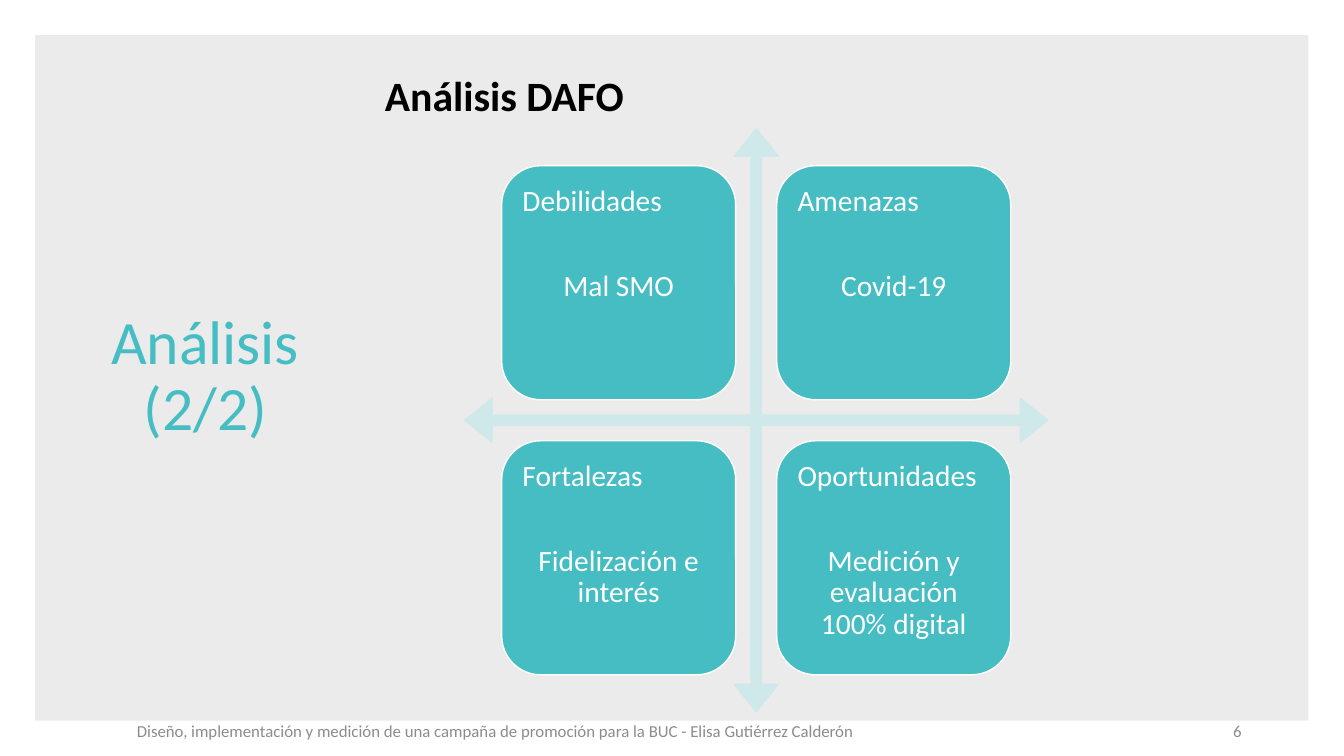
from dataclasses import dataclass

from lxml.etree import SubElement
from pptx import Presentation
from pptx.dml.color import RGBColor
from pptx.enum.shapes import MSO_SHAPE as SHAPE
from pptx.enum.text import MSO_ANCHOR as ANCHOR, MSO_AUTO_SIZE as FIT, PP_ALIGN as ALIGN
from pptx.oxml.ns import qn
from pptx.util import Pt


@dataclass(frozen=True)
class Theme:
    """Hold the colours, font and type sizes."""
    teal: RGBColor = RGBColor(0x45, 0xBD, 0xC3)
    pale: RGBColor = RGBColor(0xCF, 0xE8, 0xE9)
    white: RGBColor = RGBColor(0xFF, 0xFF, 0xFF)
    black: RGBColor = RGBColor(0, 0, 0)
    grey: RGBColor = RGBColor(0x8C, 0x8C, 0x8C)
    font: str = "Calibri"
    title: float = 44
    heading: float = 29.8
    card: float = 21
    footer: float = 12


THEME = Theme()


def place(sp, box):
    """Move and size a shape to a box in points."""
    sp.left, sp.top, sp.width, sp.height = (Pt(v) for v in box)


def add_text(p, text, size, color, align=ALIGN.LEFT, spacing=None, bold=False):
    """Add one formatted run to a paragraph."""
    p.alignment = align
    p.line_spacing = spacing
    r = p.add_run()
    r.text = text
    r.font.name, r.font.size, r.font.bold = THEME.font, Pt(size), bold
    r.font.color.rgb = color


def add_block(slide, kind, box, color):
    """Add a flat filled shape without outline."""
    sp = slide.shapes.add_shape(kind, *(Pt(v) for v in box))
    sp.shadow.inherit = False
    sp.fill.solid()
    sp.fill.fore_color.rgb = color
    sp.line.fill.background()
    return sp


def add_panel(slide, box):
    """Add the faint panel behind everything else."""
    sp = add_block(slide, SHAPE.RECTANGLE, box, THEME.black)
    color = sp.element.spPr.find(qn("a:solidFill"))[0]
    SubElement(color, qn("a:alpha"), val="8000")
    slide.shapes.element.insert(2, sp.element)


def fill_title(slide, box, text):
    """Place and fill the title placeholder."""
    sp = slide.shapes.title
    place(sp, box)
    tf = sp.text_frame
    tf.word_wrap, tf.auto_size, tf.vertical_anchor = True, FIT.NONE, ANCHOR.MIDDLE
    add_text(tf.paragraphs[0], text, THEME.title, THEME.teal, ALIGN.CENTER, 0.9)


def fill_heading(slide, box, text):
    """Place and fill the body placeholder as an unbulleted heading."""
    sp = slide.placeholders[1]
    place(sp, box)
    tf = sp.text_frame
    tf.word_wrap, tf.auto_size, tf.vertical_anchor = True, FIT.NONE, ANCHOR.TOP
    p = tf.paragraphs[0]
    add_text(p, text, THEME.heading, THEME.black, spacing=1.3, bold=True)
    p.space_before = Pt(10)
    pPr = p.runs[0].font._element.getparent().getparent().get_or_add_pPr()
    pPr.set("marL", "0")
    pPr.set("indent", "0")
    SubElement(pPr, qn("a:buNone"))


def add_card(slide, box, heading, item):
    """Add one rounded quadrant card with its heading and item."""
    sp = add_block(slide, SHAPE.ROUNDED_RECTANGLE, box, THEME.teal)
    sp.line.color.rgb = THEME.white
    sp.line.width = Pt(1)
    tf = sp.text_frame
    tf.word_wrap, tf.vertical_anchor = True, ANCHOR.TOP
    tf.margin_left = tf.margin_right = tf.margin_top = tf.margin_bottom = Pt(6.72)
    add_text(tf.paragraphs[0], heading, THEME.card, THEME.white, spacing=0.9)
    p = tf.add_paragraph()
    add_text(p, item, THEME.card, THEME.white, ALIGN.CENTER, 0.9)
    p.space_before = Pt(37.5)


def add_matrix(slide, box, cards):
    """Add the crossed arrows and a two-by-two grid of cards."""
    left, top, side, _ = box
    arrows = add_block(slide, SHAPE.QUAD_ARROW, box, THEME.pale)
    for i, value in enumerate((0.02, 0.04, 0.05)):
        arrows.adjustments[i] = value
    size, inset = side * 0.4, side * 0.065
    step = side - 2 * inset - size
    for i, (heading, item) in enumerate(cards):
        row, col = divmod(i, 2)
        x, y = left + inset + col * step, top + inset + row * step
        add_card(slide, (x, y, size, size), heading, item)


def add_footer(slide, box, text, align):
    """Add one small grey footer text."""
    tf = slide.shapes.add_textbox(*(Pt(v) for v in box)).text_frame
    tf.word_wrap, tf.vertical_anchor = True, ANCHOR.MIDDLE
    add_text(tf.paragraphs[0], text, THEME.footer, THEME.grey, align)


def main():
    """Build and save the slide."""
    prs = Presentation()
    prs.slide_width, prs.slide_height = Pt(960), Pt(540)
    slide = prs.slides.add_slide(prs.slide_layouts[1])
    add_panel(slide, (25.2, 25.2, 909.4, 489.6))
    fill_title(slide, (66, 75.6, 161.3, 388), "Análisis (2/2)")
    fill_heading(slide, (267.8, 35.3, 626.4, 56.2), "Análisis DAFO")
    add_matrix(slide, (331.2, 91.2, 418, 418), [
        ("Debilidades", "Mal SMO"),
        ("Amenazas", "Covid-19"),
        ("Fortalezas", "Fidelización e interés"),
        ("Oportunidades", "Medición y evaluación 100% digital"),
    ])
    add_footer(slide, (66, 507.6, 576, 28.8),
               "Diseño, implementación y medición de una campaña de promoción "
               "para la BUC - Elisa Gutiérrez Calderón", ALIGN.CENTER)
    add_footer(slide, (678, 507.6, 216, 28.8), "6", ALIGN.RIGHT)
    prs.save("out.pptx")


if __name__ == "__main__":
    main()
